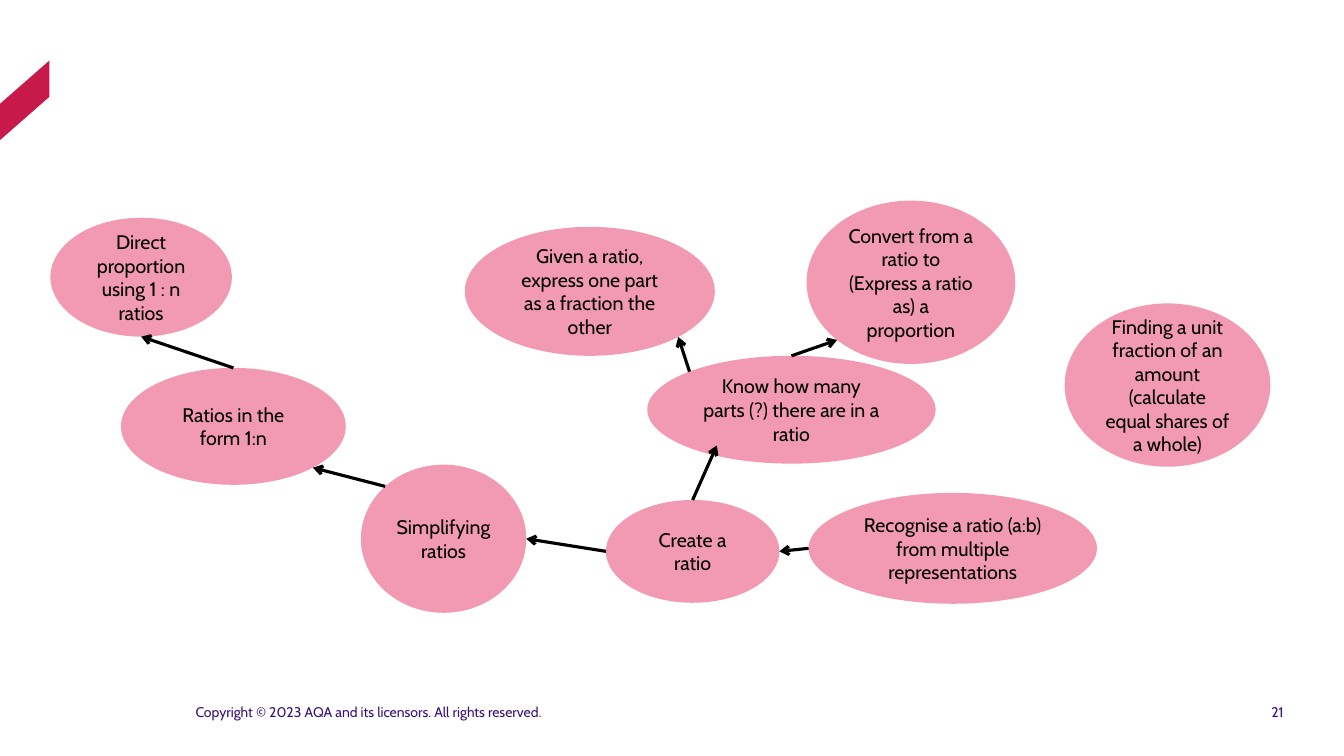
from dataclasses import dataclass
from math import cos, radians, sin

from lxml import etree
from pptx import Presentation
from pptx.dml.color import RGBColor
from pptx.enum import shapes, text
from pptx.oxml import ns
from pptx.util import Inches, Pt


@dataclass(frozen=True)
class Theme:
    font: str = "Cabin"
    idea_size: int = 14
    footer_size: int = 10
    line_width: float = 2.25
    bubble: RGBColor = RGBColor.from_string("F29AB3")
    ink: RGBColor = RGBColor.from_string("000000")
    footer: RGBColor = RGBColor.from_string("371376")
    ribbon: RGBColor = RGBColor.from_string("C8194B")


THEME = Theme()

IDEAS = {
    "unit fraction": ("Finding a unit fraction of an amount (calculate equal shares of a whole)",
                      (10.56, 3.01, 2.04, 1.62)),
    "create": ("Create a ratio", (6.01, 4.96, 1.72, 1.02)),
    "recognise": ("Recognise a ratio (a:b) from multiple representations", (8.02, 4.89, 2.86, 1.1)),
    "one to n": ("Ratios in the form 1:n", (1.2, 3.65, 2.23, 1.16)),
    "convert": ("Convert from a ratio to (Express a ratio as) a proportion", (8, 1.99, 2.07, 1.62)),
    "fraction": ("Given a ratio, express one part as a fraction the other", (4.61, 2.25, 2.48, 1.28)),
    "simplify": ("Simplifying ratios", (3.58, 4.61, 1.64, 1.47)),
    "parts": ("Know how many parts (?) there are in a ratio", (6.42, 3.53, 2.86, 1.07)),
    "direct": ("Direct proportion using 1 : n ratios", (0.5, 2.16, 1.8, 1.18)),
}

RIGHT, BOTTOM_RIGHT, BOTTOM, BOTTOM_LEFT = 0, 45, 90, 135
LEFT, TOP_LEFT, TOP = 180, 225, 270

LINKS = [
    (("simplify", TOP_LEFT), ("one to n", BOTTOM_RIGHT)),
    (("recognise", LEFT), ("create", RIGHT)),
    (("create", LEFT), ("simplify", RIGHT)),
    (("parts", TOP), ("convert", BOTTOM_LEFT)),
    (("parts", TOP_LEFT), ("fraction", BOTTOM_RIGHT)),
    (("one to n", TOP), ("direct", BOTTOM)),
]
CREATE_TO_PARTS_END = (7.11, 4.42)

FOOTERS = [
    ("Copyright © 2023 AQA and its licensors. All rights reserved.",
     (1.94, 6.75, 7.92, 0.4), text.PP_ALIGN.LEFT),
    ("21", (11.79, 6.75, 0.94, 0.4), text.PP_ALIGN.RIGHT),
]
RIBBON = [(0.49, 0.6), (0.49, 0.96), (0, 1.39), (0, 1.03)]


def write(frame, words, size, color, align, anchor):
    frame.text = words
    frame.word_wrap = True
    frame.vertical_anchor = anchor
    para = frame.paragraphs[0]
    para.alignment = align
    font = para.runs[0].font
    font.name, font.size, font.color.rgb = THEME.font, Pt(size), color


def paint(shape, color):
    shape.shadow.inherit = False
    shape.fill.solid()
    shape.fill.fore_color.rgb = color
    shape.line.fill.background()


def add_ribbon(page):
    start, *rest = [(Inches(x), Inches(y)) for x, y in RIBBON]
    builder = page.shapes.build_freeform(*start)
    builder.add_line_segments(rest)
    paint(builder.convert_to_shape(), THEME.ribbon)


def add_idea(page, words, bounds):
    bubble = page.shapes.add_shape(shapes.MSO_SHAPE.OVAL, *map(Inches, bounds))
    paint(bubble, THEME.bubble)
    write(bubble.text_frame, words, THEME.idea_size, THEME.ink,
          text.PP_ALIGN.CENTER, text.MSO_ANCHOR.MIDDLE)


def add_footer(page, words, bounds, align):
    frame = page.shapes.add_textbox(*map(Inches, bounds)).text_frame
    frame.margin_left = frame.margin_right = frame.margin_top = frame.margin_bottom = 0
    write(frame, words, THEME.footer_size, THEME.footer, align, text.MSO_ANCHOR.BOTTOM)


def rim(idea, angle):
    left, top, width, height = IDEAS[idea][1]
    return (left + width / 2 * (1 + cos(radians(angle))),
            top + height / 2 * (1 + sin(radians(angle))))


def add_arrow(page, start, end):
    arrow = page.shapes.add_connector(shapes.MSO_CONNECTOR.STRAIGHT, *map(Inches, start + end))
    arrow.line.color.rgb = THEME.ink
    arrow.line.width = Pt(THEME.line_width)
    properties = arrow.element.spPr
    etree.SubElement(properties.find(ns.qn("a:ln")), ns.qn("a:tailEnd"), type="arrow")
    etree.SubElement(properties, ns.qn("a:effectLst"))


def main():
    deck = Presentation()
    deck.slide_width, deck.slide_height = Inches(13.33), Inches(7.5)
    page = deck.slides.add_slide(deck.slide_layouts[6])
    add_ribbon(page)
    for footer in FOOTERS:
        add_footer(page, *footer)
    for idea in IDEAS.values():
        add_idea(page, *idea)
    for source, target in LINKS:
        add_arrow(page, rim(*source), rim(*target))
    add_arrow(page, rim("create", TOP), CREATE_TO_PARTS_END)
    deck.save("out.pptx")


if __name__ == "__main__":
    main()
